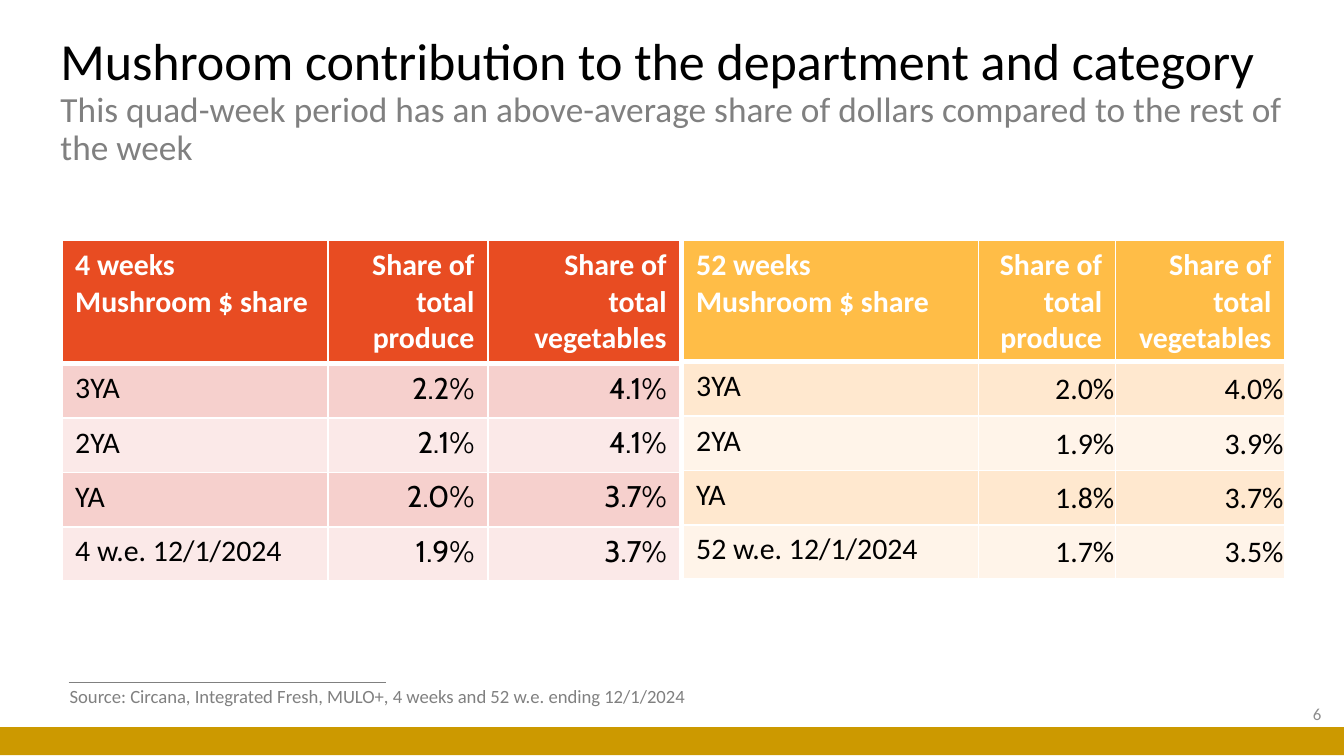
import pptx
import pptx.dml.color
import pptx.enum.shapes
import pptx.enum.text
import pptx.oxml
import pptx.oxml.ns
import pptx.util
from pptx.util import Inches

COLORS = {
    "black": "000000",
    "white": "FFFFFF",
    "gray": "808080",
    "number": "8C8C8C",
    "gold": "CC9900",
    "red": "E84C22",
    "red_dark": "F6D0CD",
    "red_light": "FBE9E8",
    "amber": "FFBD47",
    "amber_dark": "FFE8CF",
    "amber_light": "FFF4E9",
}
ANCHOR = pptx.enum.text.MSO_ANCHOR
ALIGN = pptx.enum.text.PP_ALIGN
NAMESPACE = pptx.oxml.ns.nsdecls("a")
HEADER_HEIGHT, ROW_HEIGHT = 0.9, 0.405


def rgb(name):
    return pptx.dml.color.RGBColor.from_string(COLORS[name])


def add_break(para, size):
    """Add a line break that has the height of the text around it."""
    para.add_line_break()
    para._p.findall(pptx.oxml.ns.qn("a:br"))[-1].append(
        pptx.oxml.parse_xml(f'<a:rPr {NAMESPACE} sz="{round(size * 100)}"/>')
    )


def add_span(para, text, size, color, font="Calibri", bold=False):
    """Add one formatted run per line of the text."""
    for index, line in enumerate(text.split("\n")):
        if index:
            add_break(para, size)
        span = para.add_run()
        span.text = line
        span.font.size = pptx.util.Pt(size)
        span.font.name = font
        span.font.bold = bold
        span.font.color.rgb = rgb(color)


def add_title(page, heading, subheading):
    title = page.shapes.title
    title.left, title.top = Inches(0.35), Inches(0.51)
    title.width, title.height = Inches(9.58), Inches(0.5)
    frame = title.text_frame
    frame.word_wrap = True
    frame.auto_size = pptx.enum.text.MSO_AUTO_SIZE.NONE
    frame.vertical_anchor = ANCHOR.MIDDLE
    para = frame.paragraphs[0]
    para.alignment = ALIGN.LEFT
    para.line_spacing = 0.9
    add_span(para, heading, 27.9, "black")
    add_break(para, 27.9)
    add_span(para, subheading, 18.9, "gray")


def add_label(page, place, text, size, color, align=ALIGN.LEFT, anchor=ANCHOR.TOP, wrap=True):
    box = page.shapes.add_textbox(*map(Inches, place))
    box.text_frame.word_wrap = wrap
    box.text_frame.vertical_anchor = anchor
    para = box.text_frame.paragraphs[0]
    para.alignment = align
    add_span(para, text, size, color)


def add_footer_band(page):
    band = page.shapes.add_shape(
        pptx.enum.shapes.MSO_SHAPE.RECTANGLE,
        Inches(0), Inches(5.41), Inches(10), Inches(0.21),
    )
    band.shadow.inherit = False
    band.fill.solid()
    band.fill.fore_color.rgb = rgb("gold")
    band.line.fill.background()


def add_source_rule(page):
    rule = page.shapes.add_connector(
        pptx.enum.shapes.MSO_CONNECTOR.STRAIGHT,
        Inches(0.51), Inches(5.08), Inches(2.87), Inches(5.08),
    )
    rule.line.color.rgb = rgb("gray")
    rule.line.width = pptx.util.Pt(0.5)
    rule._element.spPr.append(pptx.oxml.parse_xml(f"<a:effectLst {NAMESPACE}/>"))


def set_borders(cell, widths):
    """Draw white borders; widths maps each side (L, R, T, B) to points."""
    properties = cell._tc.get_or_add_tcPr()
    for side, width in widths.items():
        properties.append(pptx.oxml.parse_xml(
            f'<a:ln{side} {NAMESPACE} w="{pptx.util.Pt(width)}">'
            f'<a:solidFill><a:srgbClr val="{COLORS["white"]}"/></a:solidFill></a:ln{side}>'
        ))


def add_share_table(page, left, widths, rows, hue, value_font, tight):
    """Add a share table; tight puts the values right at the cell edges."""
    table = page.shapes.add_table(
        len(rows), len(widths), Inches(left), Inches(1.79), Inches(sum(widths)),
        Inches(HEADER_HEIGHT + ROW_HEIGHT * (len(rows) - 1)),
    ).table
    for column, width in zip(table.columns, widths):
        column.width = Inches(width)
    for row_index, texts in enumerate(rows):
        header = row_index == 0
        table.rows[row_index].height = Inches(HEADER_HEIGHT if header else ROW_HEIGHT)
        fill = hue if header else hue + ("_dark" if row_index % 2 else "_light")
        for column_index, text in enumerate(texts):
            cell = table.cell(row_index, column_index)
            value = not header and column_index > 0
            set_borders(cell, {
                "L": 1, "R": 1, "T": 3 if row_index == 1 else 1, "B": 3 if header else 1,
            })
            cell.fill.solid()
            cell.fill.fore_color.rgb = rgb(fill)
            if value and tight:
                cell.vertical_anchor = ANCHOR.MIDDLE
                cell.margin_left = cell.margin_right = cell.margin_top = Inches(0.01)
                cell.margin_bottom = 0
            para = cell.text_frame.paragraphs[0]
            para.alignment = ALIGN.RIGHT if column_index else ALIGN.LEFT
            add_span(para, text, 16, "white" if header else "black",
                     value_font if value else "Calibri", header)


def main():
    deck = pptx.Presentation()
    deck.slide_width, deck.slide_height = Inches(10), Inches(5.625)
    page = deck.slides.add_slide(deck.slide_layouts.get_by_name("Title Only"))

    add_source_rule(page)
    add_footer_band(page)
    add_title(
        page,
        "Mushroom contribution to the department and category",
        "This quad-week period has an above-average share of dollars "
        "compared to the rest of the week",
    )
    shares = ["Share of total produce", "Share of total vegetables"]
    add_share_table(page, 0.46, [1.98, 1.19, 1.43], [
        ["4 weeks\nMushroom $ share", *shares],
        ["3YA", "2.2%", "4.1%"],
        ["2YA", "2.1%", "4.1%"],
        ["YA", "2.0%", "3.7%"],
        ["4 w.e. 12/1/2024", "1.9%", "3.7%"],
    ], "red", "Cabin", False)
    add_label(page, (7.68, 5.16, 2.25, 0.3), "6", 9, "number", ALIGN.RIGHT, ANCHOR.MIDDLE)
    add_label(
        page, (0.42, 5.05, 4.88, 0.27),
        "Source: Circana, Integrated Fresh, MULO+, 4 weeks and 52 w.e. ending 12/1/2024",
        10, "gray", wrap=False,
    )
    add_share_table(page, 5.08, [2.2, 1.02, 1.26], [
        ["52 weeks\nMushroom $ share", *shares],
        ["3YA", "2.0%", "4.0%"],
        ["2YA", "1.9%", "3.9%"],
        ["YA", "1.8%", "3.7%"],
        ["52 w.e. 12/1/2024", "1.7%", "3.5%"],
    ], "amber", "Calibri", True)
    deck.save("out.pptx")


if __name__ == "__main__":
    main()
